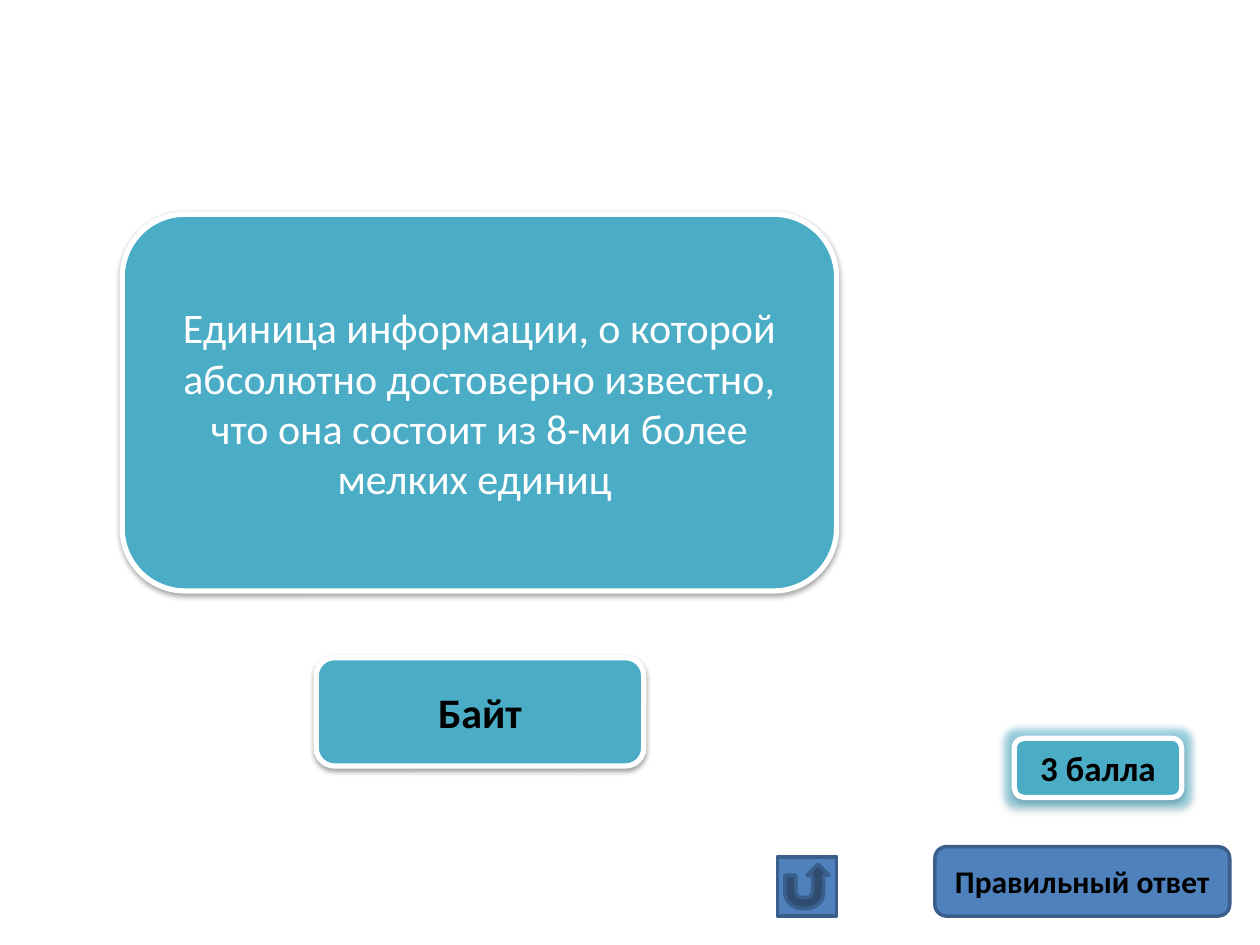
from lxml.etree import SubElement
from pptx import Presentation
from pptx.dml.color import RGBColor
from pptx.enum.shapes import MSO_SHAPE
from pptx.enum.text import MSO_ANCHOR, PP_ALIGN
from pptx.oxml.ns import qn
from pptx.util import Pt

PX = 9144
COLORS = {
    "teal": "4BACC6",
    "blue": "4F81BD",
    "navy": "3A5F8C",
    "white": "FFFFFF",
    "black": "000000",
    "glow": "35B8DA",
}
ROUND = MSO_SHAPE.ROUNDED_RECTANGLE


def color(name):
    return RGBColor.from_string(COLORS[name])


def add_effect(card, tag, tint, alpha, **settings):
    effects = card._element.spPr.find(qn("a:effectLst"))
    effect = SubElement(effects, qn(tag), {k: str(v) for k, v in settings.items()})
    shade = SubElement(effect, qn("a:srgbClr"), val=COLORS[tint])
    SubElement(shade, qn("a:alpha"), val=str(alpha * 1000))


presentation = Presentation()
presentation.slide_width = 1000 * PX
presentation.slide_height = 750 * PX
slide = presentation.slides.add_slide(presentation.slide_layouts[6])

question = "Единица информации, о которой абсолютно достоверно известно, что она состоит из 8-ми более мелких единиц "
cards = [
    (ROUND, (97, 170, 567, 299), "teal", question, 24, "white"),
    (ROUND, (742, 672, 234, 55), "blue", "Правильный ответ", 18, "black"),
    (MSO_SHAPE.ACTION_BUTTON_RETURN, (617, 680, 47, 47), "blue", "", 18, "black"),
    (ROUND, (805, 586, 133, 47), "teal", "3 балла", 20, "black"),
    (ROUND, (251, 522, 260, 86), "teal", "Байт", 24, "black"),
]

for preset, box, fill, wording, size, ink in cards:
    card = slide.shapes.add_shape(preset, *(length * PX for length in box))
    card.shadow.inherit = False
    card.fill.solid()
    card.fill.fore_color.rgb = color(fill)
    card.line.color.rgb = color("white" if fill == "teal" else "navy")
    card.line.width = Pt(3 if fill == "teal" else 2)

    if wording == "3 балла":
        add_effect(card, "a:glow", "glow", 40, rad=Pt(8))
    if fill == "teal":
        add_effect(card, "a:outerShdw", "black", 38, blurRad=Pt(3.1),
                   dist=Pt(1.6), dir=90 * 60000, rotWithShape=0)

    if wording:
        frame = card.text_frame
        frame.word_wrap = True
        frame.vertical_anchor = MSO_ANCHOR.MIDDLE
        paragraph = frame.paragraphs[0]
        paragraph.alignment = PP_ALIGN.CENTER
        run = paragraph.add_run()
        run.text = wording
        run.font.name = "Calibri"
        run.font.size = Pt(size)
        run.font.bold = ink == "black"
        run.font.color.rgb = color(ink)

presentation.save("out.pptx")
